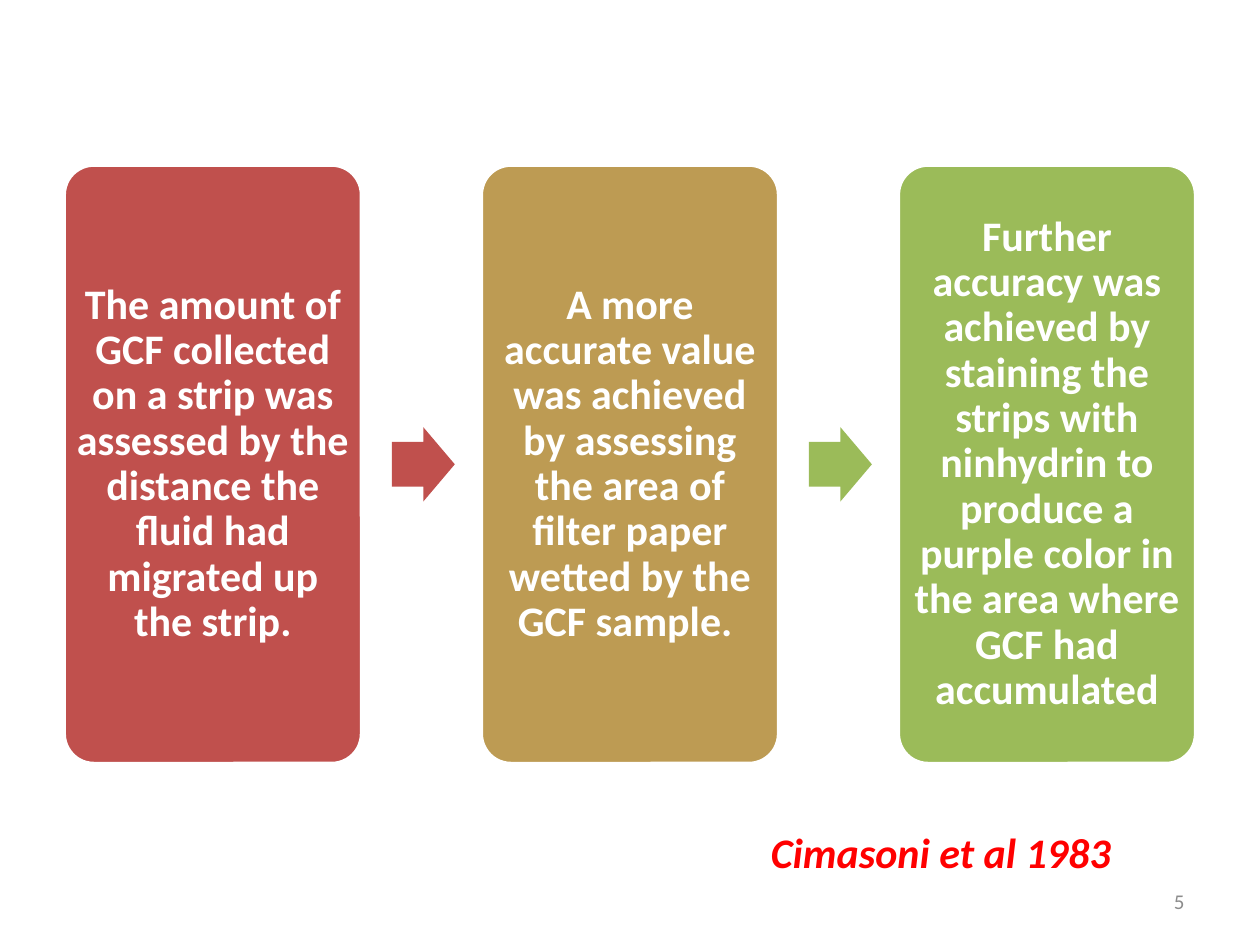
import pptx
import pptx.dml.color
import pptx.enum.shapes
import pptx.enum.text
import pptx.util

RGB = pptx.dml.color.RGBColor
KIND = pptx.enum.shapes.MSO_SHAPE
ALIGN = pptx.enum.text.PP_ALIGN
MID = pptx.enum.text.MSO_ANCHOR.MIDDLE
TOP = pptx.enum.text.MSO_ANCHOR.TOP

WHITE = RGB(0xFF, 0xFF, 0xFF)
BRICK = RGB(0xC0, 0x50, 0x4D)
SAND = RGB(0xBD, 0x9B, 0x53)
GREEN = RGB(0x9B, 0xBB, 0x59)
RED = RGB(0xFF, 0x00, 0x00)
GREY = RGB(0x8C, 0x8C, 0x8C)

LEFT, HEAD, WIDE, TALL, STEP = 5.1, 13.1, 23.6, 47.5, 33.1
STAGES = [
    (BRICK, "The amount of GCF collected on a strip was assessed by the "
            "distance the fluid had migrated up the strip."),
    (SAND, "A more accurate value was achieved by assessing the area of "
           "filter paper wetted by the GCF sample. "),
    (GREEN, "Further accuracy was achieved by staining the strips with "
            "ninhydrin to produce a purple color in the area where GCF had "
            "accumulated"),
]


class Deck:
    """Draws styled elements on a slide ruled into 100 columns and 75 rows."""

    def __init__(self, font="Calibri", size=24):
        self.font, self.size = font, size
        self.show = pptx.Presentation()
        self.show.slide_width = pptx.util.Inches(10)
        self.show.slide_height = pptx.util.Inches(7.5)
        self.slide = self.show.slides.add_slide(self.show.slide_layouts[6])

    def place(self, col, row, cols, rows):
        wide, tall = self.show.slide_width, self.show.slide_height
        return (int(wide * col / 100), int(tall * row / 75),
                int(wide * cols / 100), int(tall * rows / 75))

    def words(self, frame, text, color, align, size=None, bold=True, slant=False):
        frame.word_wrap = True
        para = frame.paragraphs[0]
        para.alignment = align
        run = para.add_run()
        run.text = text
        run.font.name = self.font
        run.font.size = pptx.util.Pt(size or self.size)
        run.font.bold, run.font.italic = bold, slant
        run.font.color.rgb = color
        return para

    def shape(self, kind, box, fill, *bends):
        form = self.slide.shapes.add_shape(kind, *self.place(*box))
        form.shadow.inherit = False
        form.fill.solid()
        form.fill.fore_color.rgb = fill
        form.line.fill.background()
        for spot, bend in enumerate(bends):
            form.adjustments[spot] = bend
        return form

    def card(self, box, fill, text):
        form = self.shape(KIND.ROUNDED_RECTANGLE, box, fill, 0.1)
        form.line.color.rgb = WHITE
        form.line.width = pptx.util.Pt(2)
        frame = form.text_frame
        frame.vertical_anchor = MID
        inset = pptx.util.Inches(0.03)
        frame.margin_left = frame.margin_right = inset
        frame.margin_top = frame.margin_bottom = inset
        self.words(frame, text, WHITE, ALIGN.CENTER).line_spacing = 0.9

    def arrow(self, box, fill):
        self.shape(KIND.RIGHT_ARROW, box, fill, 0.6, 0.5)

    def label(self, box, text, color, align=ALIGN.LEFT, anchor=TOP, **style):
        frame = self.slide.shapes.add_textbox(*self.place(*box)).text_frame
        frame.vertical_anchor = anchor
        self.words(frame, text, color, align, **style)


def main():
    deck = Deck()
    for turn, (fill, text) in enumerate(STAGES):
        col = LEFT + turn * STEP
        if turn:
            tint = BRICK if turn == 1 else fill
            deck.arrow((col - 7.1, HEAD + (TALL - 5.9) / 2, 5, 5.9), tint)
        deck.card((col, HEAD, WIDE, TALL), fill, text)
    deck.label((60.2, 65.1, 34.6, 5), "Cimasoni et al 1983", RED, slant=True)
    deck.label((71.7, 69.5, 23.3, 4), "5", GREY, ALIGN.RIGHT, MID,
               size=12, bold=False)
    deck.show.save("out.pptx")


if __name__ == "__main__":
    main()
